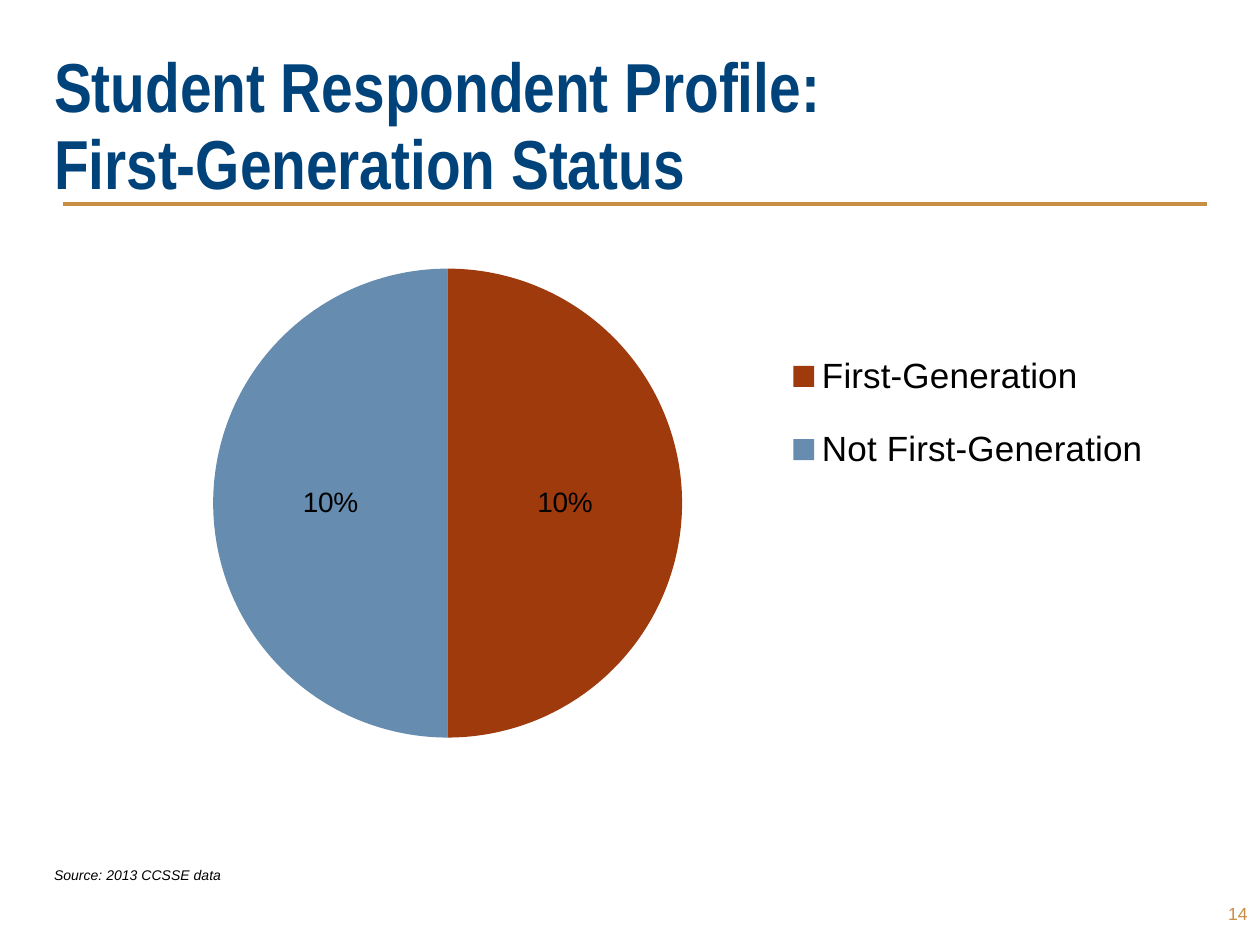
from lxml import etree
from pptx import Presentation
from pptx.chart.data import CategoryChartData
from pptx.dml.color import RGBColor
from pptx.enum.chart import XL_CHART_TYPE, XL_LABEL_POSITION, XL_LEGEND_POSITION
from pptx.enum.shapes import MSO_CONNECTOR
from pptx.enum.text import MSO_ANCHOR, PP_ALIGN
from pptx.oxml.ns import qn
from pptx.util import Cm, Pt

PIE = XL_CHART_TYPE.PIE
CENTER = XL_LABEL_POSITION.CENTER
LEGEND_RIGHT = XL_LEGEND_POSITION.RIGHT
STRAIGHT = MSO_CONNECTOR.STRAIGHT
TOP, MIDDLE, BOTTOM = MSO_ANCHOR.TOP, MSO_ANCHOR.MIDDLE, MSO_ANCHOR.BOTTOM
LEFT, RIGHT = PP_ALIGN.LEFT, PP_ALIGN.RIGHT

NAVY = RGBColor(0x00, 0x42, 0x7A)
GOLD = RGBColor(0xC7, 0x8E, 0x44)
RUST = RGBColor(0x9F, 0x3A, 0x0D)
BLACK = RGBColor(0, 0, 0)


def style(font, size, color, name="Arial"):
    font.name = name
    font.size = Pt(size)
    font.color.rgb = color


def add_text(slide, box, lines, size, color, name="Arial", bold=False,
             italic=False, anchor=TOP, align=LEFT, pitch=None):
    frame = slide.shapes.add_textbox(*map(Cm, box)).text_frame
    frame.word_wrap = True
    frame.vertical_anchor = anchor
    para = frame.paragraphs[0]
    para.alignment = align
    if pitch:
        para.line_spacing = Pt(pitch)
    for i, line in enumerate(lines):
        if i:
            para.add_line_break()
        run = para.add_run()
        run.text = line
        style(run.font, size, color, name)
        run.font.bold = bold
        run.font.italic = italic


def add_rule(slide, left, right, top):
    rule = slide.shapes.add_connector(STRAIGHT, Cm(left), Cm(top), Cm(right), Cm(top))
    rule.line.color.rgb = GOLD
    rule.line.width = Pt(2.25)
    etree.SubElement(rule._element.spPr, qn("a:effectLst"))


def set_layout(parent, index, x, y, w, h, inner=False):
    """Place a chart part by fractions of the chart frame."""
    for old in parent.findall(qn("c:layout")):
        parent.remove(old)
    layout = etree.Element(qn("c:layout"))
    manual = etree.SubElement(layout, qn("c:manualLayout"))
    parts = [("layoutTarget", "inner")] if inner else []
    parts += [("xMode", "edge"), ("yMode", "edge"),
              ("x", x), ("y", y), ("w", w), ("h", h)]
    for tag, val in parts:
        etree.SubElement(manual, qn("c:" + tag)).set("val", str(val))
    parent.insert(index, layout)


def add_pie(slide, box, shares):
    data = CategoryChartData(number_format="0%")
    data.categories = list(shares)
    data.add_series("Series 1", list(shares.values()))
    chart = slide.shapes.add_chart(PIE, *map(Cm, box), data).chart
    chart.has_title = False
    style(chart.font, 18, BLACK)
    set_layout(chart._chartSpace.chart.plotArea, 0, 0.14, 0.19, 0.41, 0.68, True)

    # Slices: the second is a see-through navy
    plot = chart.plots[0]
    plot.vary_by_categories = True
    for i, color in enumerate((RUST, NAVY)):
        fill = plot.series[0].points[i].format.fill
        fill.solid()
        fill.fore_color.rgb = color
    tint = plot.series[0].points[1].format.fill._xPr.find(".//" + qn("a:srgbClr"))
    etree.SubElement(tint, qn("a:alpha")).set("val", "60000")

    # Labels
    plot.has_data_labels = True
    labels = plot.data_labels
    labels.show_value = True
    labels.show_percentage = False
    labels.number_format = "0%"
    labels.number_format_is_linked = False
    labels.position = CENTER
    style(labels.font, 16, BLACK)

    # Legend
    chart.has_legend = True
    legend = chart.legend
    legend.position = LEGEND_RIGHT
    legend.include_in_layout = False
    style(legend.font, 20, BLACK)
    set_layout(legend._element, 1, 0.63, 0.27, 0.34, 0.26)


def main():
    deck = Presentation()
    deck.slide_width, deck.slide_height = Cm(25.4), Cm(19.05)
    slide = deck.slides.add_slide(deck.slide_layouts[6])

    # Heading
    add_rule(slide, 1.27, 24.33, 4.11)
    add_text(slide, (0.84, 1.35, 23.7, 2.87),
             ["Student Respondent Profile:", "First-Generation Status"],
             39.6, NAVY, "Arial Narrow", bold=True, anchor=BOTTOM, pitch=44)

    # Page number
    add_text(slide, (23.7, 17.98, 1.7, 0.89), ["14"], 10, GOLD,
             anchor=MIDDLE, align=RIGHT)

    # Chart and its source
    add_pie(slide, (1.07, 2.74, 23.06, 13.97),
            {"First-Generation": 0.1, "Not First-Generation": 0.1})
    add_text(slide, (0.84, 17.35, 5.08, 0.61), ["Source: 2013 CCSSE data"],
             8, BLACK, italic=True)

    deck.save("out.pptx")


if __name__ == "__main__":
    main()
